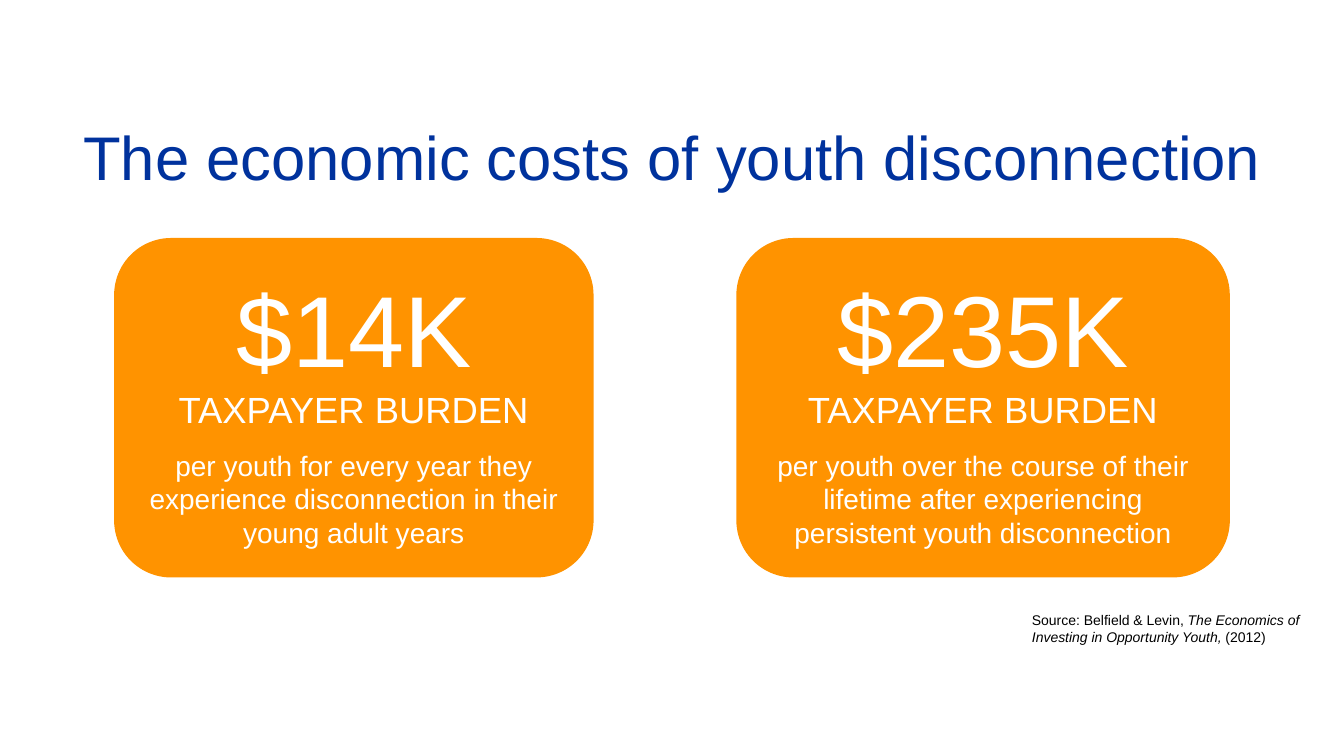
import pptx
import pptx.util
import pptx.dml.color
import pptx.enum.shapes
import pptx.enum.text

Pt = pptx.util.Pt
RGBColor = pptx.dml.color.RGBColor
CENTER = pptx.enum.text.PP_ALIGN.CENTER
MIDDLE = pptx.enum.text.MSO_ANCHOR.MIDDLE

BLUE = RGBColor(0x00, 0x32, 0x9D)
ORANGE = RGBColor(0xFF, 0x93, 0x00)
WHITE = RGBColor(0xFF, 0xFF, 0xFF)
BLACK = RGBColor(0x00, 0x00, 0x00)
FONT = "Arial"

TITLE = "The economic costs of youth disconnection"
SOURCE = [  # text, italic
    ("Source: Belfield & Levin, ", False),
    ("The Economics of Investing in Opportunity Youth, ", True),
    ("(2012)", False),
]
CARDS = [  # left, width, amount, explanation
    (82, 341.5, "$14K",
     "per youth for every year they experience disconnection in their young adult years"),
    (526.5, 351.5, "$235K",
     "per youth over the course of their lifetime after experiencing persistent youth disconnection"),
]
CARD_LABEL = "TAXPAYER BURDEN"
CARD_TOP, CARD_HEIGHT = 170.5, 241.5


def set_font(para, size, color):
    para.font.name = FONT
    para.font.size = Pt(size)
    para.font.color.rgb = color


def add_title(page):
    title = page.shapes.title
    title.left, title.top, title.width, title.height = Pt(22), Pt(80), Pt(917), Pt(70)
    title.text_frame.text = TITLE
    title.text_frame.vertical_anchor = MIDDLE
    para = title.text_frame.paragraphs[0]
    para.alignment = CENTER
    para.line_spacing = 0.9
    set_font(para, 44, BLUE)


def add_source(page):
    box = page.shapes.add_textbox(Pt(730), Pt(433.5), Pt(209), Pt(31.5))
    box.text_frame.word_wrap = True
    para = box.text_frame.paragraphs[0]
    set_font(para, 10, BLACK)
    for text, italic in SOURCE:
        span = para.add_run()
        span.text = text
        span.font.italic = italic


def add_card(page, left, width, amount, explanation):
    card = page.shapes.add_shape(
        pptx.enum.shapes.MSO_SHAPE.ROUNDED_RECTANGLE,
        Pt(left), Pt(CARD_TOP), Pt(width), Pt(CARD_HEIGHT))
    card.shadow.inherit = False
    card.fill.solid()
    card.fill.fore_color.rgb = ORANGE
    card.line.color.rgb = ORANGE
    card.line.width = Pt(1)
    frame = card.text_frame
    frame.word_wrap = True
    frame.vertical_anchor = MIDDLE
    frame.text = "\n".join([amount, CARD_LABEL, explanation])
    for para, size in zip(frame.paragraphs, (72, 26, 20)):
        para.alignment = CENTER
        set_font(para, size, WHITE)
    frame.paragraphs[1].space_after = Pt(12)


def main():
    deck = pptx.Presentation()
    deck.slide_width, deck.slide_height = Pt(960), Pt(540)
    page = deck.slides.add_slide(deck.slide_layouts.get_by_name("Title Only"))
    add_title(page)
    add_source(page)
    for card in CARDS:
        add_card(page, *card)
    deck.save("out.pptx")


if __name__ == "__main__":
    main()
